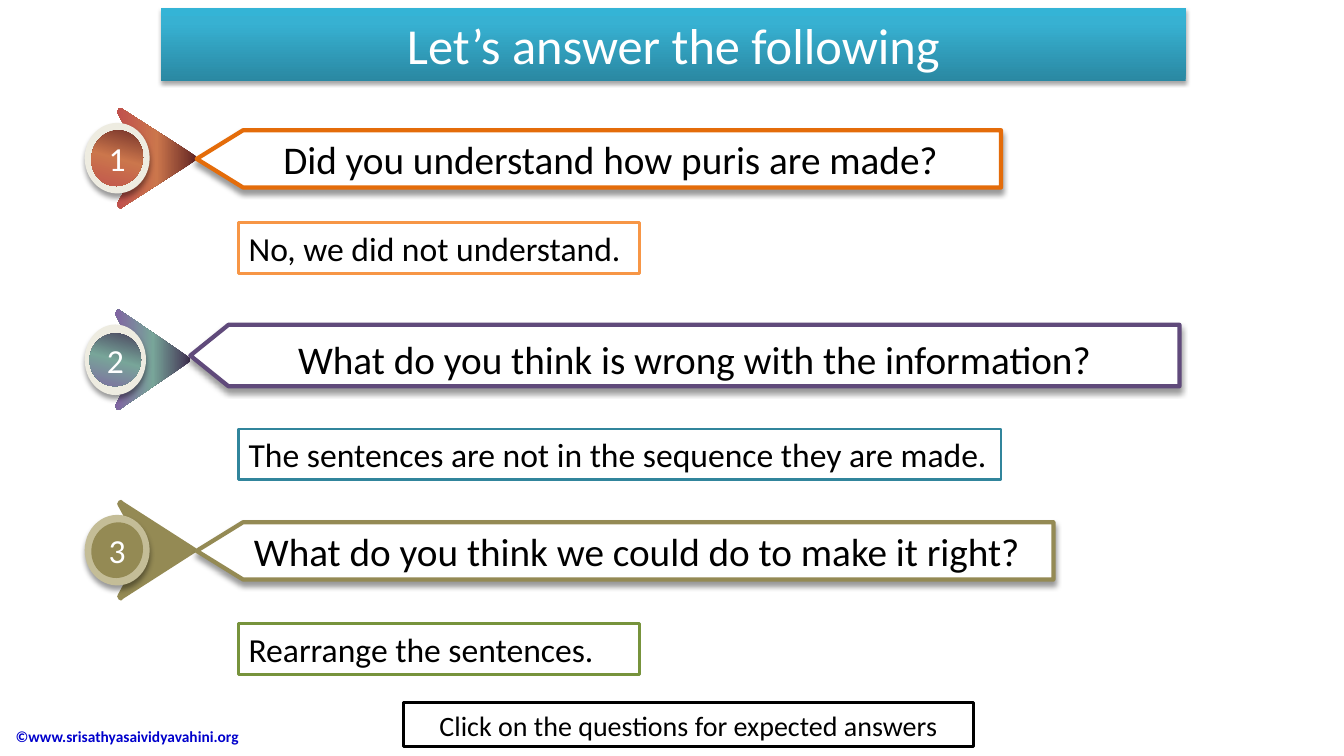
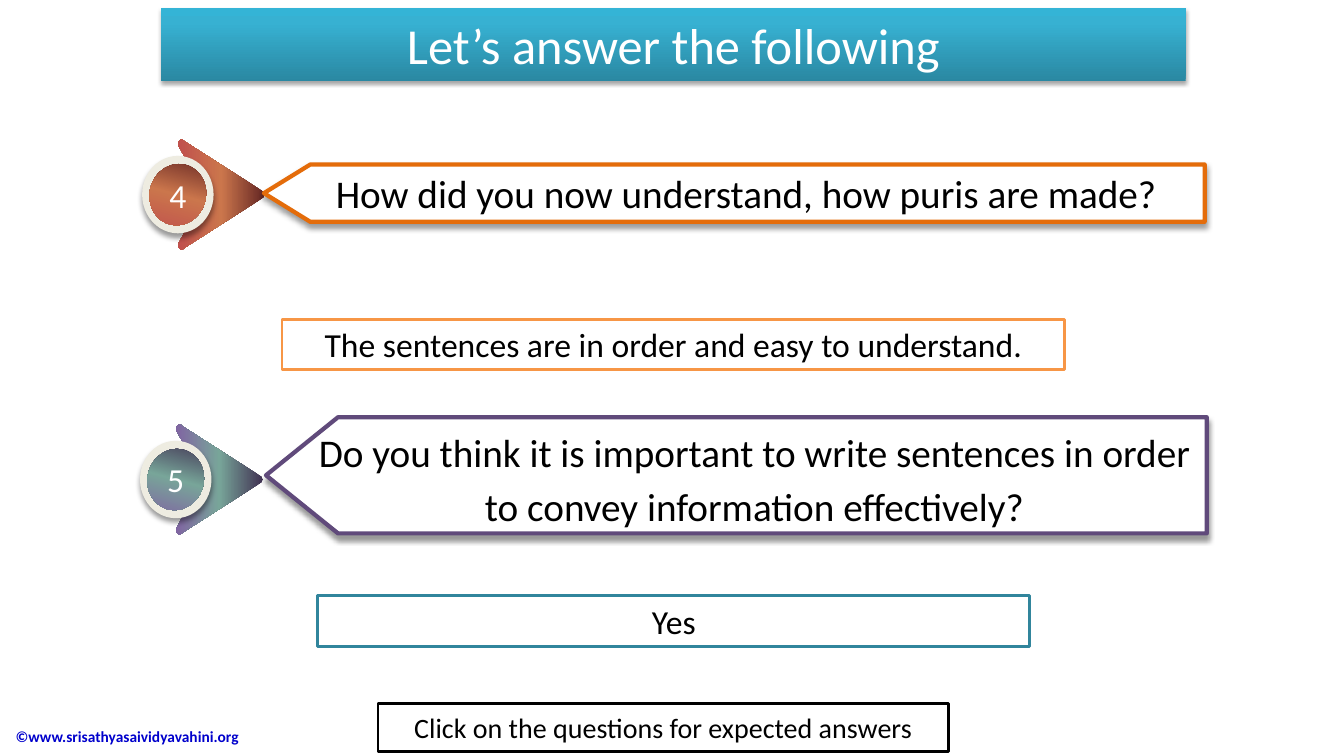
import dataclasses
import typing

import lxml.etree
import pptx
import pptx.dml.color
import pptx.enum.shapes
import pptx.enum.text
import pptx.oxml.ns
import pptx.util

Pt = pptx.util.Pt
qn = pptx.oxml.ns.qn
Kind = pptx.enum.shapes.MSO_SHAPE
Align = pptx.enum.text.PP_ALIGN
Stops = tuple[tuple[int, str], ...]


@dataclasses.dataclass(frozen=True)
class Theme:
    font: str = "Calibri"
    title: int = 36
    ask: int = 28
    reply: int = 24
    hint: int = 20
    foot: int = 11
    white: str = "FFFFFF"
    black: str = "000000"
    link: str = "0000CC"
    band: Stops = ((0, "2A88A2"), (80, "37B1D2"), (100, "34B4D6"))


class Box(typing.NamedTuple):
    left: float
    top: float
    width: float
    height: float


class Shade(typing.NamedTuple):
    alpha: int
    blur: float
    dist: float


class Tone(typing.NamedTuple):
    edge: str
    ring: str
    stops: Stops
    reply: str
    notch: float
    lines: float


class Row(typing.NamedTuple):
    tone: Tone
    badge: Box
    plate: Box
    ask: str
    box: Box
    reply: str


class Page(typing.NamedTuple):
    rows: tuple[Row, ...]
    hint: Box
    align: Align


THEME = Theme()
SOFT = Shade(35, 3.1, 1.8)
DEEP = Shade(40, 4, 3)
TITLE = Box(115, 6, 732, 52)
FOOT = Box(4, 511, 254, 29.5)

ORANGE = Tone("E46C0A", "EEECE1", ((0, "632523"), (50, "CB764C"), (100, "C0504D")),
              "F79646", 0.81, 1)
PURPLE = Tone("604A7B", "EEECE1", ((0, "403152"), (50, "78A599"), (100, "8064A2")),
              "31859C", 0.62, 1.15)
OLIVE = Tone("948A54", "C4BD97", ((0, "948A54"),), "77933C", 0.81, 1)

# Upper half of the arrowhead as fractions of its box, from notch to tip
HALF = ((0.31, 0.5), (0.3, 0.48), (0.01, 0.06), (0, 0.04), (0.02, 0.01),
        (0.05, 0), (0.08, 0.02), (0.97, 0.47), (0.99, 0.48), (1, 0.5))

PAGES = (
    Page((
        Row(ORANGE, Box(60.5, 77, 80, 72), Box(140.5, 93, 574.5, 41),
            "Did you understand how puris are made?",
            Box(170.5, 159, 286.5, 36.5), "No, we did not understand."),
        Row(PURPLE, Box(60.5, 221, 75.5, 72), Box(136, 232, 706.5, 44),
            "What do you think is wrong with the information?",
            Box(170.5, 306.5, 544.5, 36), "The sentences are not in the sequence they are made."),
        Row(OLIVE, Box(60.5, 357, 80, 72), Box(140.5, 373, 612, 41),
            "What do you think we could do to make it right?",
            Box(170.5, 445.5, 286.5, 36.5), "Rearrange the sentences."),
    ), Box(288, 502, 407.5, 31.5), Align.LEFT),
    Page((
        Row(ORANGE, Box(101.5, 99.5, 88, 79), Box(188.5, 117.5, 672, 41),
            "How did you now understand, how puris are made?",
            Box(201.5, 228, 559, 36), "The sentences are in order and easy to understand."),
        Row(PURPLE, Box(100, 303, 88, 79), Box(190, 298, 672, 83),
            "Do you think it is important to write sentences in order "
            "to convey information effectively?",
            Box(227, 425.5, 508.5, 36.5), "Yes"),
    ), Box(270, 502.5, 407.5, 34.5), Align.CENTER),
)


def rgb(code: str) -> pptx.dml.color.RGBColor:
    return pptx.dml.color.RGBColor.from_string(code)


def spots(box: Box) -> list[pptx.util.Length]:
    return [Pt(side) for side in box]


def paint(shape, stops: Stops, angle: int = 180) -> None:
    """Fill with one colour or with a linear gradient."""
    if len(stops) == 1:
        shape.fill.solid()
        shape.fill.fore_color.rgb = rgb(stops[0][1])
        return
    shape.fill.gradient()
    shape.fill.gradient_angle = angle
    parent = shape.element.spPr.find(".//" + qn("a:gsLst"))
    for stop in list(parent):
        parent.remove(stop)
    for place, code in stops:
        stop = lxml.etree.SubElement(parent, qn("a:gs"), pos=str(place * 1000))
        lxml.etree.SubElement(stop, qn("a:srgbClr"), val=code)


def finish(shape, edge: str | None = None, weight: float = 2,
           shade: Shade | None = None) -> None:
    """Set the outline and the shadow."""
    if edge:
        shape.line.color.rgb = rgb(edge)
        shape.line.width = Pt(weight)
    else:
        shape.line.fill.background()
    shape.shadow.inherit = False
    if shade:
        effects = shape.element.spPr.find(qn("a:effectLst"))
        outer = lxml.etree.SubElement(
            effects, qn("a:outerShdw"), blurRad=str(Pt(shade.blur)),
            dist=str(Pt(shade.dist)), dir="5400000", algn="ctr", rotWithShape="0")
        tint = lxml.etree.SubElement(outer, qn("a:srgbClr"), val=THEME.black)
        lxml.etree.SubElement(tint, qn("a:alpha"), val=str(shade.alpha * 1000))


def write(shape, text: str, size: int, color: str = THEME.black,
          align: Align = Align.CENTER, bold: bool = False, lines: float = 1) -> None:
    frame = shape.text_frame
    frame.text = text
    frame.word_wrap = True
    frame.vertical_anchor = pptx.enum.text.MSO_ANCHOR.MIDDLE
    para = frame.paragraphs[0]
    para.alignment = align
    para.line_spacing = lines
    font = para.runs[0].font
    font.name, font.size, font.bold = THEME.font, Pt(size), bold
    font.color.rgb = rgb(color)


def panel(slide, box: Box, text: str, size: int, edge: str, align: Align) -> None:
    shape = slide.shapes.add_shape(Kind.RECTANGLE, *spots(box))
    paint(shape, ((0, THEME.white),))
    finish(shape, edge)
    write(shape, text, size, align=align)


def arrow(slide, box: Box, stops: Stops) -> None:
    lower = [(x, 1 - y) for x, y in reversed(HALF[1:-1])]
    dots = [(Pt(box.left + x * box.width), Pt(box.top + y * box.height))
            for x, y in [*HALF, *lower]]
    pen = slide.shapes.build_freeform(*dots[0])
    pen.add_line_segments(dots[1:], close=True)
    shape = pen.convert_to_shape()
    paint(shape, stops)
    finish(shape)


def badge(slide, box: Box, tone: Tone, number: int) -> None:
    """Draw an arrowhead with a numbered, ringed disc on its left part."""
    mid = box.left + 0.29 * box.width

    def around(wide: float, high: float) -> Box:
        width, height = wide * box.width, high * box.height
        return Box(mid - width / 2, box.top + (box.height - height) / 2, width, height)

    arrow(slide, Box(mid, box.top, 0.71 * box.width, box.height), tone.stops)
    ring = slide.shapes.add_shape(Kind.OVAL, *spots(around(0.58, 0.7)))
    paint(ring, ((0, tone.ring),))
    finish(ring, shade=DEEP)
    disc = slide.shapes.add_shape(Kind.OVAL, *spots(around(0.5, 0.51)))
    disc.rotation = 285.3
    paint(disc, tone.stops)
    finish(disc)
    label = slide.shapes.add_textbox(*spots(around(0.39, 0.5)))
    write(label, str(number), THEME.reply, THEME.white)


def plate(slide, box: Box, tone: Tone, text: str) -> None:
    """Draw the left-pointing plate that holds a question."""
    shape = slide.shapes.add_shape(Kind.PENTAGON, *spots(box))
    shape.adjustments[0] = tone.notch
    shape.element.spPr.find(qn("a:xfrm")).set("flipH", "1")
    paint(shape, ((0, THEME.white),))
    finish(shape, tone.edge, 3, DEEP)
    write(shape, text, THEME.ask, lines=tone.lines)


def frame(slide) -> None:
    """Draw the title band and footer shared by all slides."""
    foot = slide.shapes.add_textbox(*spots(FOOT))
    write(foot, "©www.srisathyasaividyavahini.org", THEME.foot, THEME.link, Align.LEFT, True)
    band = slide.shapes.add_shape(Kind.RECTANGLE, *spots(TITLE))
    paint(band, THEME.band, 90)
    finish(band, shade=SOFT)
    write(band, "Let’s answer the following", THEME.title, THEME.white)


def main() -> None:
    deck = pptx.Presentation()
    deck.slide_width, deck.slide_height = Pt(960), Pt(540)
    number = 0
    for page in PAGES:
        slide = deck.slides.add_slide(deck.slide_layouts[6])
        frame(slide)
        for row in page.rows:
            number += 1
            badge(slide, row.badge, row.tone, number)
            plate(slide, row.plate, row.tone, row.ask)
            panel(slide, row.box, row.reply, THEME.reply, row.tone.reply, page.align)
        panel(slide, page.hint, "Click on the questions for expected answers",
              THEME.hint, THEME.black, Align.CENTER)
    deck.save("out.pptx")


if __name__ == "__main__":
    main()
